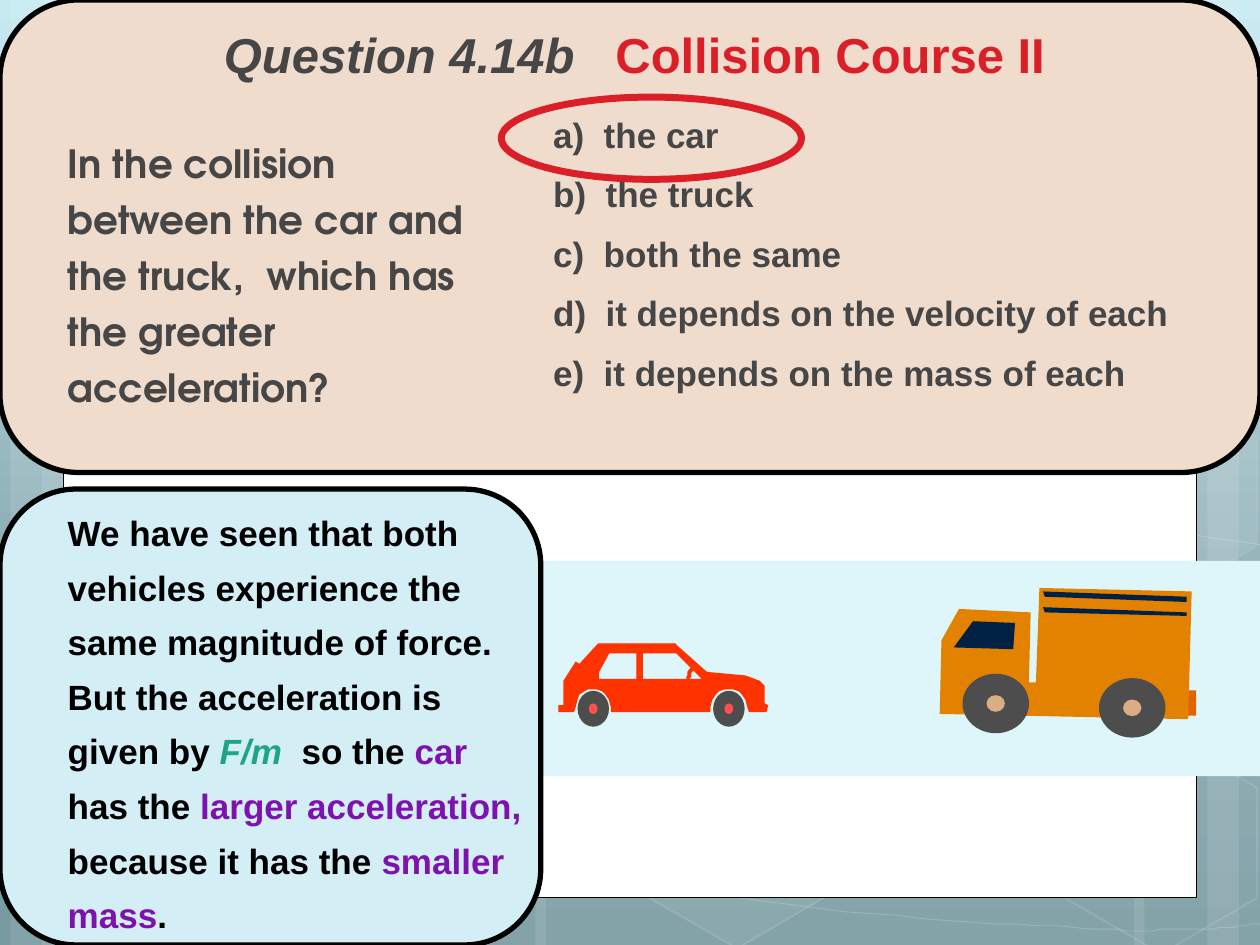
"""Build the physics question slide on a car and truck collision."""
import math

import lxml.etree
import pptx
import pptx.dml.color
import pptx.enum.shapes
import pptx.enum.text
import pptx.oxml.ns
import pptx.util

Pt = pptx.util.Pt
qn = pptx.oxml.ns.qn
KIND = pptx.enum.shapes.MSO_SHAPE
ALIGN = pptx.enum.text.PP_ALIGN
ANCHOR = pptx.enum.text.MSO_ANCHOR
DARK, RED, BLACK, WHITE = "464646", "DA1F28", "000000", "FFFFFF"
PURPLE, GREEN, ORANGE, NAVY = "7E12AE", "1FA585", "E28200", "002144"
TIRE, SCARLET = "4D4D4D", "FF3300"


def rgb(code):
    """Turn a hex string into a colour."""
    return pptx.dml.color.RGBColor.from_string(code)


def fade(shape, route, share):
    """Give the colour found at the route an opacity in percent."""
    color = shape.element.spPr.find("/".join(qn(tag) for tag in route.split("/")))
    lxml.etree.SubElement(color, qn("a:alpha")).set("val", str(share * 1000))


def paint(shape, fill=None, line=None, width=1, clear=None, faint=None):
    """Set fill, line and their opacity, without a shadow."""
    shape.shadow.inherit = False
    if fill:
        shape.fill.solid()
        shape.fill.fore_color.rgb = rgb(fill)
        if clear:
            fade(shape, "a:solidFill/a:srgbClr", clear)
    else:
        shape.fill.background()
    if line:
        shape.line.color.rgb = rgb(line)
        shape.line.width = Pt(width)
        if faint:
            fade(shape, "a:ln/a:solidFill/a:srgbClr", faint)
    else:
        shape.line.fill.background()


def block(shapes, kind, box, *look, **more):
    """Add a painted preset shape."""
    shape = shapes.add_shape(kind, *map(Pt, box))
    paint(shape, *look, **more)
    return shape


def outline(shapes, points, *look, close=True, **more):
    """Add a painted outline through the points."""
    pen = shapes.build_freeform(*points[0], scale=Pt(1))
    pen.add_line_segments(points[1:], close=close)
    paint(pen.convert_to_shape(), *look, **more)


def disc(shapes, center, size, fill):
    """Add a filled ellipse around a center."""
    (x, y), (wide, high) = center, size
    block(shapes, KIND.OVAL, (x - wide / 2, y - high / 2, wide, high), fill)


def wheel(shapes, center, size, hub, color):
    """Add a tire with its hub."""
    disc(shapes, center, size, TIRE)
    disc(shapes, center, hub, color)


def arch(x, y, wide, high):
    """List the points of a wheel arch from right to left."""
    turns = [math.pi * step / 12 for step in range(13)]
    return [(x + wide * math.cos(t), y - high * math.sin(t)) for t in turns]


def curve(knots, steps=12):
    """List points along joined cubic curves."""
    points = [knots[0]]
    for at in range(0, len(knots) - 1, 3):
        for step in range(1, steps + 1):
            t = step / steps
            parts = ((1 - t) ** 3, 3 * t * (1 - t) ** 2, 3 * t * t * (1 - t), t ** 3)
            points.append(tuple(
                sum(part * knot[axis] for part, knot in zip(parts, knots[at:at + 4]))
                for axis in (0, 1)))
    return points


def write(shapes, box, lines, size, color, font="Arial", inset=7.2, pitch=None,
          gap=0, align=ALIGN.LEFT, anchor=ANCHOR.TOP):
    """Add a bold text box; each line is a list of (text, color, italic) runs."""
    frame = shapes.add_textbox(*map(Pt, box)).text_frame
    frame.word_wrap = True
    frame.margin_left = Pt(inset)
    frame.vertical_anchor = anchor
    for place, runs in enumerate(lines):
        para = frame.add_paragraph() if place else frame.paragraphs[0]
        para.alignment = align
        para.line_spacing = pitch
        if place:
            para.space_before = Pt(gap)
        para.font.name, para.font.size, para.font.bold = font, Pt(size), True
        para.font.color.rgb = rgb(color)
        for text, tint, slant in runs:
            run = para.add_run()
            run.text = text
            if tint:
                run.font.color.rgb = rgb(tint)
            if slant:
                run.font.italic = True


def shade(slide, stops):
    """Fill the background with a downward gradient."""
    fill = slide.background.fill
    fill.gradient()
    fill.gradient_angle = 270
    ramp = slide.element.find(".//" + qn("a:gsLst"))
    for old in list(ramp):
        ramp.remove(old)
    for spot, code in stops:
        stop = lxml.etree.SubElement(ramp, qn("a:gs"), pos=str(spot * 1000))
        lxml.etree.SubElement(stop, qn("a:srgbClr"), val=code)


def backdrop(slide):
    """Draw the gradient, bands, curves, hexagons and white sheet."""
    shade(slide, [(0, "C7EAF2"), (62, "8BABB3"), (100, "7799A0")])
    shapes = slide.shapes
    for left, wide in ((78, 126), (6, 36), (24, 60), (112, 126), (40, 36), (58, 60),
                       (528, 126), (690, 36), (648, 60), (306, 222), (234, 36), (252, 60)):
        block(shapes, KIND.RECTANGLE, (left, 0, wide, 540), WHITE, clear=10)
    upper = [(5, 343), (26, 332), (47, 321), (87, 310), (128, 300), (186, 284), (250, 279),
             (314, 274), (392, 273), (471, 279), (550, 284), (682, 306), (725, 312)]
    lower = [(5, 416), (27, 424), (50, 432), (92, 444), (134, 454), (197, 472), (257, 485),
             (317, 497), (392, 510), (452, 517), (512, 525), (576, 528), (614, 530),
             (652, 533), (662, 531), (680, 531), (699, 531), (712, 528), (725, 528)]
    for knots in (upper, lower):
        outline(shapes, curve(knots), None, WHITE, 0.5, faint=20, close=False)
    for left, top, fill, clear, faint in ((358, 424, WHITE, 6, 12), (600.5, 427, None, None, 12),
                                          (600.5, 226, WHITE, 7, 8)):
        cell = block(shapes, KIND.HEXAGON, (left, top, 126, 109.5), fill, WHITE, 1, clear, faint)
        cell.adjustments[0] = 0.285
        cell.rotation = 30
    block(shapes, KIND.RECTANGLE, (36, 26, 648, 487), WHITE, BLACK, 0.5)


def truck(shapes):
    """Draw the orange truck."""
    block(shapes, KIND.RECTANGLE, (675, 394.5, 8.5, 14.5), "E26300")
    outline(shapes, [(537, 408), (679, 411), (681, 337.5), (594, 335.5), (592.5, 390),
                     (588, 390), (589, 350), (548.5, 348.5), (538, 366.5)], ORANGE)
    outline(shapes, [(545, 370), (579, 371), (580, 355.5), (556.5, 355)], NAVY)
    for top in (338.5, 347):
        outline(shapes, [(596, top), (597, top + 2.5), (677.5, top + 5), (678, top + 2.5)], NAVY)
    for center in ((569, 402), (647, 404.5)):
        wheel(shapes, center, (38, 34), (10.5, 9.5), "DBAD87")


def car(shapes):
    """Draw the red car."""
    hull = [(438.5, 407), *arch(416.5, 407, 11, 13.5), *arch(338.8, 407, 10.4, 13.5),
            (319, 407), (319, 403), (322.5, 403), (322.5, 390), (322, 389), (329, 378.5),
            (332, 380), (342, 387.5), (401, 387.5), (386.5, 373), (386.5, 368), (404, 384.5),
            (425.5, 386.5), (433.5, 389), (437, 392.5), (437, 402), (439, 403)]
    outline(shapes, hull, SCARLET)
    outline(shapes, [(396, 381.5), (394, 383.5), (393.5, 386), (393, 387.5)],
            SCARLET, SCARLET, 2.25, close=False)
    outline(shapes, [(386.5, 368), (386.5, 373), (367, 373), (367, 387.5), (364.5, 387.5),
                     (364.5, 373), (348, 373), (341.5, 384), (341.5, 387.5), (331, 380),
                     (341.5, 368)], SCARLET, SCARLET, 0.75)
    for center in ((416.5, 405), (339, 405)):
        wheel(shapes, center, (18, 20.5), (5, 6), "FF5050")


def main():
    """Build and save the slide."""
    deck = pptx.Presentation()
    deck.slide_width, deck.slide_height = Pt(720), Pt(540)
    slide = deck.slides.add_slide(deck.slide_layouts[6])
    shapes = slide.shapes
    backdrop(slide)
    block(shapes, KIND.ROUNDED_RECTANGLE, (0, 0, 720, 270), "EFDCCD", BLACK, 3)
    block(shapes, KIND.OVAL, (286.5, 55.5, 171.5, 47), None, RED, 4)
    choices = ["a)  the car", "b)  the truck", "c)  both the same",
               "d)  it depends on the velocity of each", "e)  it depends on the mass of each"]
    write(shapes, (309, 61.2, 411, 175), [[(text, None, False)] for text in choices],
          20, DARK, gap=10)
    ask = "In the collision between the car and the truck,  which has the greater acceleration?"
    write(shapes, (0, 71, 278, 175), [[(ask, None, False)]], 22.2, DARK,
          "TeX Gyre Adventor", 38.7, 1.2)
    block(shapes, KIND.RECTANGLE, (292, 320.5, 428, 123), "DEF5FA")
    for draw in (truck, car):
        draw(shapes.add_group_shape().shapes)
    write(shapes, (73.5, 0, 578, 66), [[("Question 4.14b   ", None, True),
                                        ("Collision Course II", RED, False)]],
          28, DARK, pitch=0.9, align=ALIGN.CENTER, anchor=ANCHOR.MIDDLE)
    block(shapes, KIND.ROUNDED_RECTANGLE, (0, 279.5, 309, 260.5), "D3EEF5", BLACK, 3)
    reason = [("We have seen that both vehicles experience the same magnitude of force.  "
               "But the acceleration is given by ", None, False),
              ("F/m  ", GREEN, True), ("so the ", None, False), ("car ", PURPLE, False),
              ("has the ", None, False), ("larger acceleration,", PURPLE, False),
              (" because it has the ", None, False), ("smaller mass", PURPLE, False),
              (".", None, False)]
    write(shapes, (0, 281.5, 309, 250), [reason], 20, BLACK, inset=38.7, pitch=1.3)
    deck.save("out.pptx")


if __name__ == "__main__":
    main()
